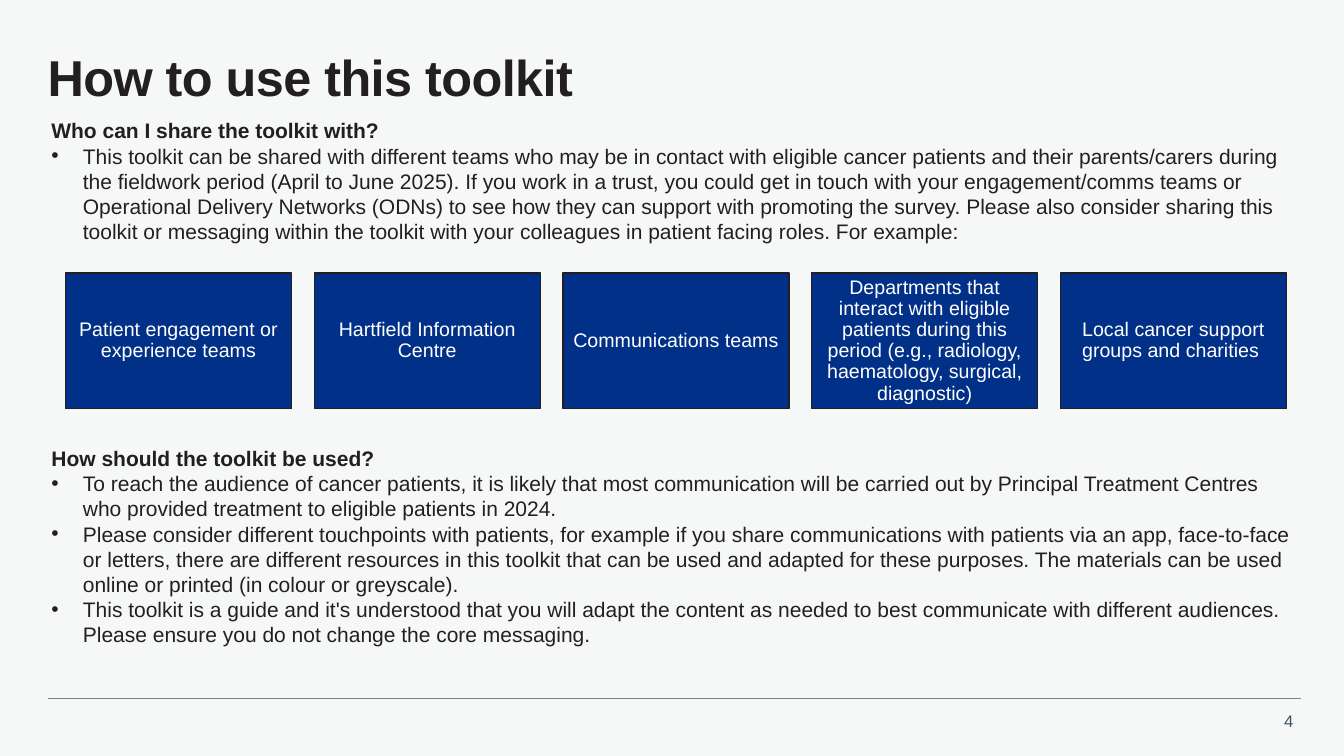
from lxml.etree import SubElement
from pptx import Presentation
from pptx.dml.color import RGBColor
from pptx.enum.shapes import MSO_CONNECTOR, MSO_SHAPE
from pptx.enum.text import MSO_ANCHOR, MSO_AUTO_SIZE, PP_ALIGN
from pptx.oxml.ns import qn
from pptx.util import Pt

BACKGROUND = RGBColor(0xF6, 0xF8, 0xF8)
INK = RGBColor(0x23, 0x1F, 0x20)
BLUE = RGBColor(0x00, 0x30, 0x87)
WHITE = RGBColor(0xFF, 0xFF, 0xFF)
RULE_GREY = RGBColor(0x76, 0x86, 0x92)
NUMBER_GREY = RGBColor(0x42, 0x55, 0x63)

SHARING = [
    "This toolkit can be shared with different teams who may be in contact with eligible "
    "cancer patients and their parents/carers during the fieldwork period (April to June "
    "2025). If you work in a trust, you could get in touch with your engagement/comms teams "
    "or Operational Delivery Networks (ODNs) to see how they can support with promoting the "
    "survey. Please also consider sharing this toolkit or messaging within the toolkit with "
    "your colleagues in patient facing roles. For example:",
]
USAGE = [
    "To reach the audience of cancer patients, it is likely that most communication will be "
    "carried out by Principal Treatment Centres who provided treatment to eligible patients "
    "in 2024.",
    "Please consider different touchpoints with patients, for example if you share "
    "communications with patients via an app, face-to-face or letters, there are different "
    "resources in this toolkit that can be used and adapted for these purposes. The materials "
    "can be used online or printed (in colour or greyscale).",
    "This toolkit is a guide and it's understood that you will adapt the content as needed to "
    "best communicate with different audiences. Please ensure you do not change the core "
    "messaging.",
]
TEAMS = [
    "Patient engagement or experience teams",
    "Hartfield Information Centre",
    "Communications teams",
    "Departments that interact with eligible patients during this period "
    "(e.g., radiology, haematology, surgical, diagnostic)",
    "Local cancer support groups and charities ",
]


class SlideBuilder:
    font = "Arial"
    body_size = 15
    body_pitch = 18
    indent = 22.5

    def __init__(self, slide):
        self.slide = slide
        fill = slide.background.fill
        fill.solid()
        fill.fore_color.rgb = BACKGROUND

    def place(self, sp, left, top, width, height):
        sp.left, sp.top, sp.width, sp.height = Pt(left), Pt(top), Pt(width), Pt(height)

    def inset(self, tf, margin):
        tf.margin_left = tf.margin_right = tf.margin_top = tf.margin_bottom = Pt(margin)

    def style(self, p, size, color, bold=False, align=PP_ALIGN.LEFT, spacing=1.0):
        p.alignment = align
        p.line_spacing = spacing
        p.space_before = p.space_after = Pt(0)
        for r in p.runs:
            r.font.name, r.font.size, r.font.bold = self.font, Pt(size), bold
            r.font.color.rgb = color

    def title(self, text, *box):
        sp = self.slide.shapes.title
        self.place(sp, *box)
        tf = sp.text_frame
        tf.text = text
        tf.auto_size = MSO_AUTO_SIZE.NONE
        tf.vertical_anchor = MSO_ANCHOR.MIDDLE
        self.inset(tf, 0)
        p = tf.paragraphs[0]
        self.style(p, 36, INK, bold=True, spacing=0.9)
        p.runs[0].font._element.set("spc", "-40")

    def section(self, idx, heading, bullets, *box):
        """Fill a body placeholder with a bold heading and a bulleted list."""
        sp = self.slide.placeholders[idx]
        self.place(sp, *box)
        tf = sp.text_frame
        tf.auto_size = MSO_AUTO_SIZE.NONE
        tf.vertical_anchor = MSO_ANCHOR.TOP
        tf.text = "\n".join([heading, *bullets])
        for i, p in enumerate(tf.paragraphs):
            self.style(p, self.body_size, INK, bold=i == 0, spacing=Pt(self.body_pitch))
            indent = Pt(self.indent) if i else 0
            pPr = p._p.get_or_add_pPr()
            pPr.set("marL", str(indent))
            pPr.set("indent", str(-indent))
            if i:
                SubElement(pPr, qn("a:buFont"), typeface=self.font)
                SubElement(pPr, qn("a:buChar"), char="•")
            else:
                SubElement(pPr, qn("a:buNone"))

    def card(self, text, *box):
        sp = self.slide.shapes.add_shape(MSO_SHAPE.RECTANGLE, *map(Pt, box))
        sp.shadow.inherit = False
        sp.fill.solid()
        sp.fill.fore_color.rgb = BLUE
        sp.line.color.rgb = INK
        sp.line.width = Pt(1)
        tf = sp.text_frame
        tf.word_wrap = True
        tf.vertical_anchor = MSO_ANCHOR.MIDDLE
        self.inset(tf, 4.4)
        tf.text = text
        self.style(tf.paragraphs[0], 14, WHITE, align=PP_ALIGN.CENTER, spacing=0.9)

    def rule(self, left, right, y):
        line = self.slide.shapes.add_connector(
            MSO_CONNECTOR.STRAIGHT, Pt(left), Pt(y), Pt(right), Pt(y))
        line.line.color.rgb = RULE_GREY
        line.line.width = Pt(0.5)
        SubElement(line._element.spPr, qn("a:effectLst"))

    def page_number(self, text, *box):
        tf = self.slide.shapes.add_textbox(*map(Pt, box)).text_frame
        tf.word_wrap = True
        tf.text = text
        self.style(tf.paragraphs[0], 12, NUMBER_GREY, align=PP_ALIGN.RIGHT)


def main():
    prs = Presentation()
    prs.slide_width, prs.slide_height = Pt(960), Pt(540)
    s = SlideBuilder(prs.slides.add_slide(prs.slide_layouts.get_by_name("Two Content")))

    s.title("How to use this toolkit", 34, 23, 898, 68.5)
    s.section(1, "Who can I share the toolkit with?", SHARING, 29.5, 80.6, 900.7, 98)
    s.section(2, "How should the toolkit be used?", USAGE, 29.5, 314.6, 900.7, 152)

    first_left, pitch = 46.8, 177.65
    for i, team in enumerate(TEAMS):
        s.card(team, first_left + i * pitch, 195, 161.5, 97)

    s.rule(34, 929.5, 499)
    s.page_number("4", 901.5, 504, 29.5, 21.6)
    prs.save("out.pptx")


if __name__ == "__main__":
    main()
